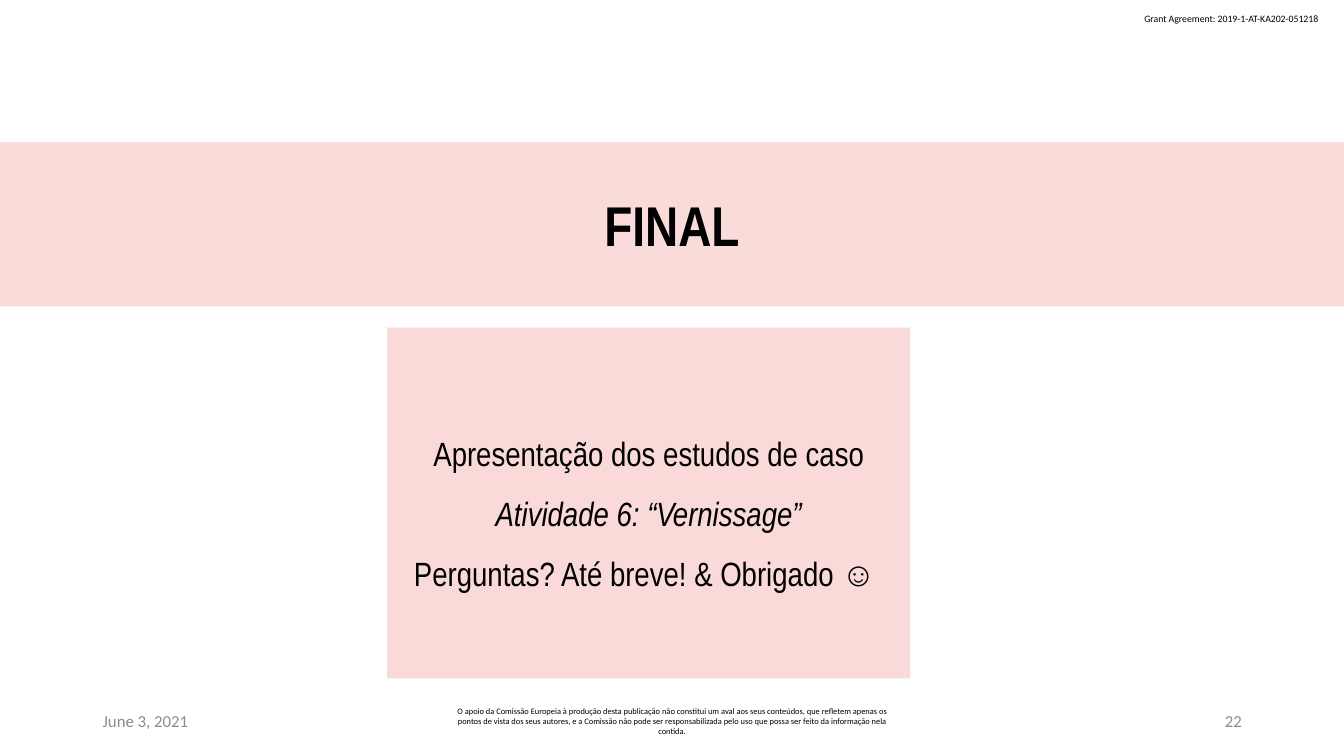
from dataclasses import dataclass

from pptx import Presentation
from pptx.dml.color import RGBColor
from pptx.enum.shapes import MSO_SHAPE
from pptx.enum.text import MSO_ANCHOR, MSO_AUTO_SIZE, PP_ALIGN
from pptx.slide import Slide
from pptx.util import Inches, Pt

SLIDE_W, SLIDE_H = Inches(13.333), Inches(7.5)


@dataclass(frozen=True)
class Theme:
    band: str = "F9DBD9"
    card: str = "F9DAD9"
    ink: str = "000000"
    muted: str = "8C8C8C"
    heading_font: str = "Arial Narrow"
    body_font: str = "Calibri"
    title: float = 40
    body: float = 24
    footer: float = 12
    grant: float = 7
    disclaimer: float = 6


@dataclass(frozen=True)
class Area:
    """Left, top, width and height in percent of the slide."""
    left: float
    top: float
    width: float
    height: float

    def emu(self) -> tuple[int, int, int, int]:
        return (int(SLIDE_W * self.left / 100), int(SLIDE_H * self.top / 100),
                int(SLIDE_W * self.width / 100), int(SLIDE_H * self.height / 100))


@dataclass(frozen=True)
class Run:
    text: str
    bold: bool = False
    italic: bool = False


@dataclass(frozen=True)
class Block:
    area: Area
    paragraphs: list[list[Run]]
    size: float
    font: str
    color: str
    align: PP_ALIGN = PP_ALIGN.CENTER
    anchor: MSO_ANCHOR = MSO_ANCHOR.MIDDLE
    fill: str | None = None
    wrap: bool = True
    spacing: float = 1.0


THEME = Theme()
FOOTER_TOP, FOOTER_H = 92.67, 5.33

# Header and footer texts
MARGIN_TEXTS = [
    Block(Area(84.4, 1.07, 14.78, 2.93),
          [[Run("Grant Agreement: 2019-1-AT-KA202-051218")]],
          THEME.grant, THEME.body_font, THEME.ink,
          PP_ALIGN.LEFT, MSO_ANCHOR.TOP, wrap=False),
    Block(Area(6.9, FOOTER_TOP, 22.5, FOOTER_H), [[Run("June 3, 2021")]],
          THEME.footer, THEME.body_font, THEME.muted, PP_ALIGN.LEFT),
    Block(Area(33.13, FOOTER_TOP, 33.75, FOOTER_H),
          [[Run("O apoio da Comissão Europeia à produção desta publicação não "
                "constitui um aval aos seus conteúdos, que refletem apenas os "
                "pontos de vista dos seus autores, e a Comissão não pode ser "
                "responsabilizada pelo uso que possa ser feito da informação "
                "nela contida.")]],
          THEME.disclaimer, THEME.body_font, THEME.ink),
    Block(Area(70.65, FOOTER_TOP, 22.5, FOOTER_H), [[Run("22")]],
          THEME.footer, THEME.body_font, THEME.muted, PP_ALIGN.RIGHT),
]

# Title band and closing card
PANELS = [
    Block(Area(0, 18.8, 100, 21.73), [[Run("FINAL", bold=True)]],
          THEME.title, THEME.heading_font, THEME.ink, fill=THEME.band),
    Block(Area(28.8, 43.33, 38.93, 46.4),
          [[Run("Apresentação dos estudos de caso "),
            Run("Atividade 6: “Vernissage”", italic=True)],
           [Run("Perguntas? Até breve! & Obrigado ☺ ")]],
          THEME.body, THEME.heading_font, THEME.ink,
          fill=THEME.card, spacing=1.5),
]


def draw_block(s: Slide, block: Block) -> None:
    if block.fill:
        sp = s.shapes.add_shape(MSO_SHAPE.RECTANGLE, *block.area.emu())
        sp.shadow.inherit = False
        sp.fill.solid()
        sp.fill.fore_color.rgb = RGBColor.from_string(block.fill)
        sp.line.fill.background()
    else:
        sp = s.shapes.add_textbox(*block.area.emu())

    tf = sp.text_frame
    tf.word_wrap = block.wrap
    tf.vertical_anchor = block.anchor
    if block.fill:
        tf.margin_left = tf.margin_right = Inches(0.13)
        tf.margin_top = tf.margin_bottom = Inches(0.07)
    if not block.wrap:
        tf.auto_size = MSO_AUTO_SIZE.SHAPE_TO_FIT_TEXT

    for i, runs in enumerate(block.paragraphs):
        p = tf.add_paragraph() if i else tf.paragraphs[0]
        p.alignment = block.align
        p.line_spacing = block.spacing
        for run in runs:
            r = p.add_run()
            r.text = run.text
            r.font.name = block.font
            r.font.size = Pt(block.size)
            r.font.bold = run.bold
            r.font.italic = run.italic
            r.font.color.rgb = RGBColor.from_string(block.color)


def main() -> None:
    prs = Presentation()
    prs.slide_width, prs.slide_height = SLIDE_W, SLIDE_H
    s = prs.slides.add_slide(prs.slide_layouts[6])
    for block in MARGIN_TEXTS + PANELS:
        draw_block(s, block)
    prs.save("out.pptx")


if __name__ == "__main__":
    main()
